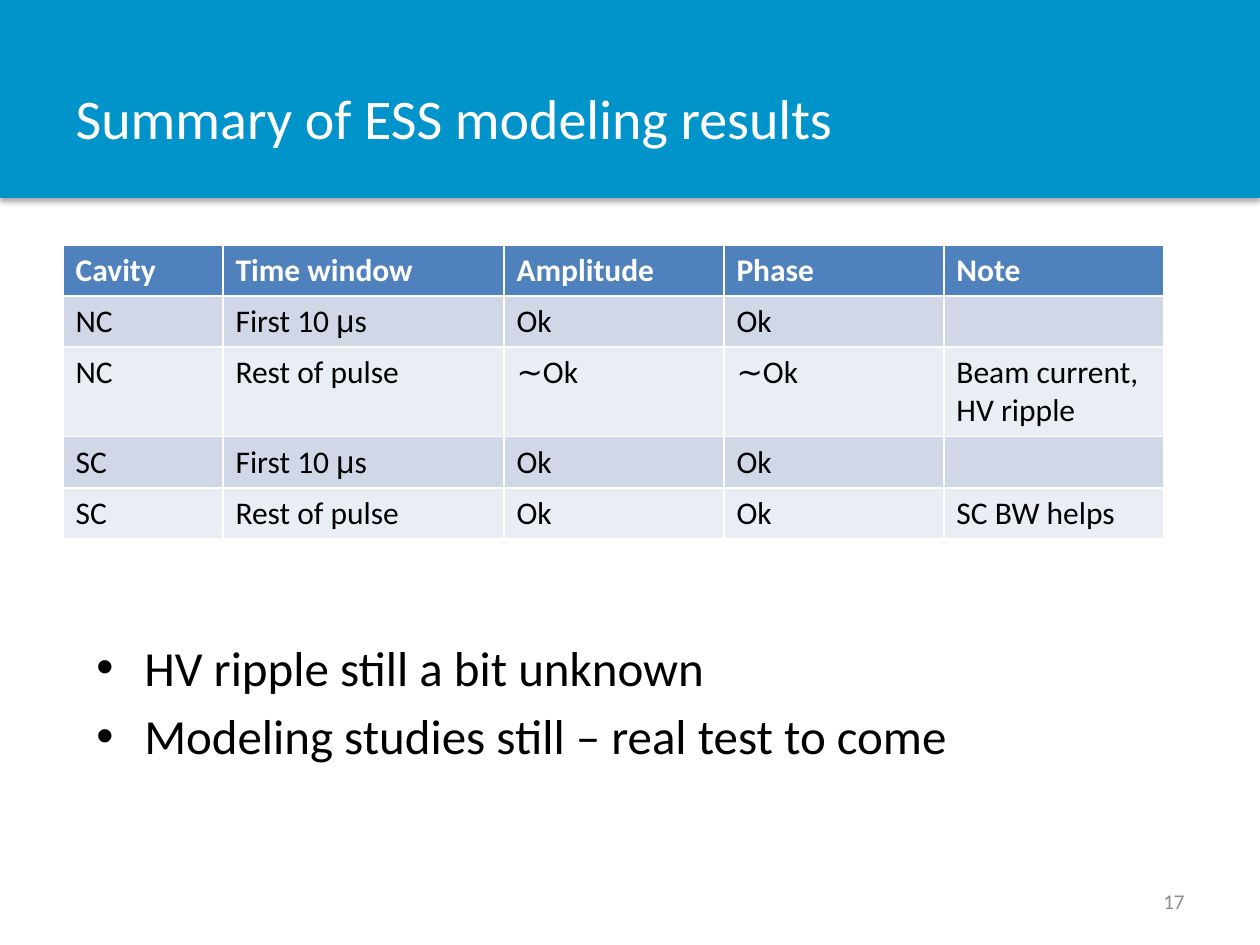
from lxml.etree import SubElement
from pptx import Presentation
from pptx.dml.color import RGBColor
from pptx.enum.shapes import MSO_SHAPE
from pptx.enum.text import MSO_ANCHOR, PP_ALIGN
from pptx.oxml.ns import qn
from pptx.util import Emu, Pt

EMU_PER_PX = 914400 // 126
TITLE_ONLY = 5
COLUMN_WIDTHS = [160, 281, 220, 220, 220]
ROW_HEIGHT = 51
RESULTS = [
    ["Cavity", "Time window", "Amplitude", "Phase", "Note"],
    ["NC", "First 10 μs", "Ok", "Ok", ""],
    ["NC", "Rest of pulse", "∼Ok", "∼Ok", "Beam current, HV ripple"],
    ["SC", "First 10 μs", "Ok", "Ok", ""],
    ["SC", "Rest of pulse", "Ok", "Ok", "SC BW helps"],
]
REMARKS = [
    "HV ripple still a bit unknown",
    "Modeling studies still – real test to come",
]


def px(*lengths):
    return [Emu(length * EMU_PER_PX) for length in lengths]


def color(hex_code):
    return RGBColor.from_string(hex_code)


def style(para, size, hex_code, bold=False):
    font = para.font
    font.name = "Calibri"
    font.size = Pt(size)
    font.bold = bold
    font.color.rgb = color(hex_code)


def add_banner(slide):
    banner = slide.shapes.add_shape(MSO_SHAPE.RECTANGLE, *px(0, 0, 1260, 198))
    banner.fill.solid()
    banner.fill.fore_color.rgb = color("0094CA")
    banner.line.fill.background()
    # Soft shadow below the banner
    banner.shadow.inherit = False
    effects = banner._element.spPr.find(qn("a:effectLst"))
    shadow = SubElement(effects, qn("a:outerShdw"), blurRad=str(Pt(3.1)),
                        dist=str(Pt(1.8)), dir="5400000", rotWithShape="0")
    tint = SubElement(shadow, qn("a:srgbClr"), val="000000")
    SubElement(tint, qn("a:alpha"), val="35000")
    # Send the banner behind the title
    slide.shapes._spTree.insert(2, banner._element)


def set_title(slide, text):
    title = slide.shapes.title
    title.left, title.top, title.width, title.height = px(63, 38, 984, 158)
    frame = title.text_frame
    frame.text = text
    frame.vertical_anchor = MSO_ANCHOR.MIDDLE
    para = frame.paragraphs[0]
    para.alignment = PP_ALIGN.LEFT
    style(para, 32, "FFFFFF")


def fill_cell(cell, text, row_index):
    is_header = row_index == 0
    cell.fill.solid()
    band = "D0D8E8" if row_index % 2 else "E9EDF4"
    cell.fill.fore_color.rgb = color("4F81BD" if is_header else band)
    para = cell.text_frame.paragraphs[0]
    style(para, 18, "FFFFFF" if is_header else "000000", is_header)
    # The Greek letter has a font of its own
    for part in filter(None, text.partition("μ")):
        span = para.add_run()
        span.text = part
        if part == "μ":
            span.font.name = "Arial"


def add_results_table(slide):
    frame = slide.shapes.add_table(
        len(RESULTS), len(COLUMN_WIDTHS),
        *px(63, 245, sum(COLUMN_WIDTHS), ROW_HEIGHT * len(RESULTS)))
    table = frame.table
    for column, width in zip(table.columns, px(*COLUMN_WIDTHS)):
        column.width = width
    for row_index, texts in enumerate(RESULTS):
        for column_index, text in enumerate(texts):
            fill_cell(table.cell(row_index, column_index), text, row_index)


def add_text_box(slide, bounds, anchor=MSO_ANCHOR.TOP):
    frame = slide.shapes.add_textbox(*px(*bounds)).text_frame
    frame.word_wrap = True
    frame.vertical_anchor = anchor
    return frame


def add_bullets(slide, texts):
    frame = add_text_box(slide, (84, 631, 1134, 248))
    indent = px(48)[0]
    for index, text in enumerate(texts):
        para = frame.add_paragraph() if index else frame.paragraphs[0]
        para.text = text
        if index:
            para.space_before = Pt(5.6)
        properties = para._p.get_or_add_pPr()
        properties.set("marL", str(indent))
        properties.set("indent", str(-indent))
        SubElement(properties, qn("a:buFont"), typeface="Arial")
        SubElement(properties, qn("a:buChar"), char="•")
        style(para, 28, "000000")


def add_page_number(slide, number):
    frame = add_text_box(slide, (903, 876, 294, 50), MSO_ANCHOR.MIDDLE)
    para = frame.paragraphs[0]
    para.text = number
    para.alignment = PP_ALIGN.RIGHT
    style(para, 12, "8C8C8C")


def main():
    deck = Presentation()
    deck.slide_width, deck.slide_height = px(1260, 945)
    slide = deck.slides.add_slide(deck.slide_layouts[TITLE_ONLY])

    # Heading
    add_banner(slide)
    set_title(slide, "Summary of ESS modeling results")

    # Content
    add_results_table(slide)
    add_bullets(slide, REMARKS)

    # Footer
    add_page_number(slide, "17")
    deck.save("out.pptx")


if __name__ == "__main__":
    main()
